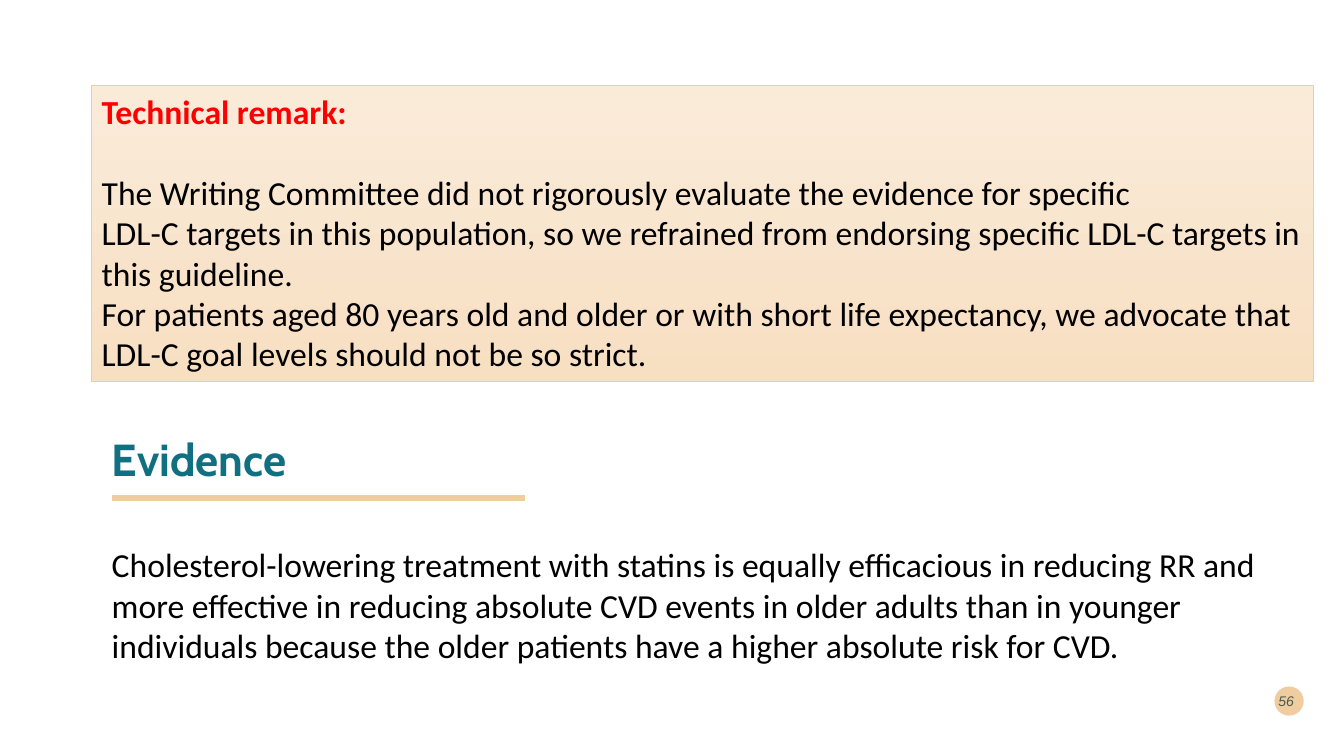
from lxml import etree
from pptx import Presentation
from pptx.dml.color import RGBColor
from pptx.enum import shapes, text
from pptx.oxml import ns
from pptx.util import Inches, Pt

# Content
REMARK_HEADING = "Technical remark:"
REMARKS = [
    "The Writing Committee did not rigorously evaluate the evidence for specific",
    "LDL-C targets in this population, so we refrained from endorsing specific "
    "LDL-C targets in this guideline.",
    "For patients aged 80 years old and older or with short life expectancy, "
    "we advocate that LDL-C goal levels should not be so strict.",
]
EVIDENCE_HEADING = "Evidence"
EVIDENCE = (
    "Cholesterol-lowering treatment with statins is equally efficacious in "
    "reducing RR and more effective in reducing absolute CVD events in older "
    "adults than in younger individuals because the older patients have a "
    "higher absolute risk for CVD."
)
PAGE_NUMBER = "56"

# Style
SAND, TEAL, INK, RED, BLACK = "F0CDA1", "107082", "00292E", "FF0000", "000000"
REMARK_GRADIENT = ["FAEBD9", "F7DFC2"]
BODY_SIZE = 24
BODY_LINE = 29.3  # height of one body line in points


def rgb(value):
    return RGBColor.from_string(value)


def write(frame, wording, size=BODY_SIZE, font="Calibri", color=BLACK, bold=False,
          italic=False, align=text.PP_ALIGN.LEFT, anchor=text.MSO_ANCHOR.TOP,
          line_spacing=None, after=0, alpha=None):
    """Fill the frame's first paragraph, or add one below existing text."""
    paragraph = frame.add_paragraph() if frame.text else frame.paragraphs[0]
    frame.word_wrap = True
    frame.vertical_anchor = anchor
    paragraph.alignment = align
    paragraph.space_after = Pt(after)
    if line_spacing:
        paragraph.line_spacing = line_spacing
    run = paragraph.add_run()
    run.text = wording
    run.font.size, run.font.name = Pt(size), font
    run.font.bold, run.font.italic = bold, italic
    run.font.color.rgb = rgb(color)
    if alpha:
        tone = run._r.find(".//" + ns.qn("a:srgbClr"))
        etree.SubElement(tone, ns.qn("a:alpha")).set("val", str(alpha * 1000))


def box(left, top, width, height):
    return Inches(left), Inches(top), Inches(width), Inches(height)


prs = Presentation()
prs.slide_width, prs.slide_height = Inches(13.33), Inches(7.5)
slide = prs.slides.add_slide(prs.slide_layouts[6])
parts = slide.shapes

# Page number on its disc
disc = parts.add_shape(shapes.MSO_SHAPE.OVAL, *box(12.64, 6.81, 0.29, 0.29))
disc.shadow.inherit = False
disc.fill.solid()
disc.fill.fore_color.rgb = rgb(SAND)
disc.line.fill.background()
page = parts.add_textbox(*box(12.54, 6.75, 0.39, 0.4))
write(page.text_frame, PAGE_NUMBER, size=10, font="Arial", color=INK, italic=True,
      align=text.PP_ALIGN.RIGHT, anchor=text.MSO_ANCHOR.MIDDLE, alpha=70)

# Evidence heading, rule and statement
heading = parts.add_textbox(*box(1.01, 3.86, 11.5, 1.45))
write(heading.text_frame, EVIDENCE_HEADING, size=32, font="Cabin", color=TEAL,
      bold=True, anchor=text.MSO_ANCHOR.MIDDLE, line_spacing=0.9)
rule = parts.add_connector(shapes.MSO_CONNECTOR.STRAIGHT, *box(1.11, 4.94, 5.21, 4.94))
rule.line.color.rgb = rgb(SAND)
rule.line.width = Pt(4.32)
etree.SubElement(rule._element.spPr, ns.qn("a:effectLst"))
evidence = parts.add_textbox(*box(1.01, 5.35, 11.92, 1.72))
write(evidence.text_frame, EVIDENCE)

# Technical remark panel
remark = parts.add_shape(shapes.MSO_SHAPE.RECTANGLE, *box(0.91, 0.85, 12.12, 2.93))
remark.shadow.inherit = False
remark.fill.gradient()
remark.fill.gradient_angle = 270
for stop, color in zip(remark.fill.gradient_stops, REMARK_GRADIENT):
    stop.color.rgb = rgb(color)
remark.line.color.rgb = rgb(SAND)
remark.line.width = Pt(0.5)
write(remark.text_frame, REMARK_HEADING, color=RED, bold=True, after=BODY_LINE)
for sentence in REMARKS:
    write(remark.text_frame, sentence)

prs.save("out.pptx")
